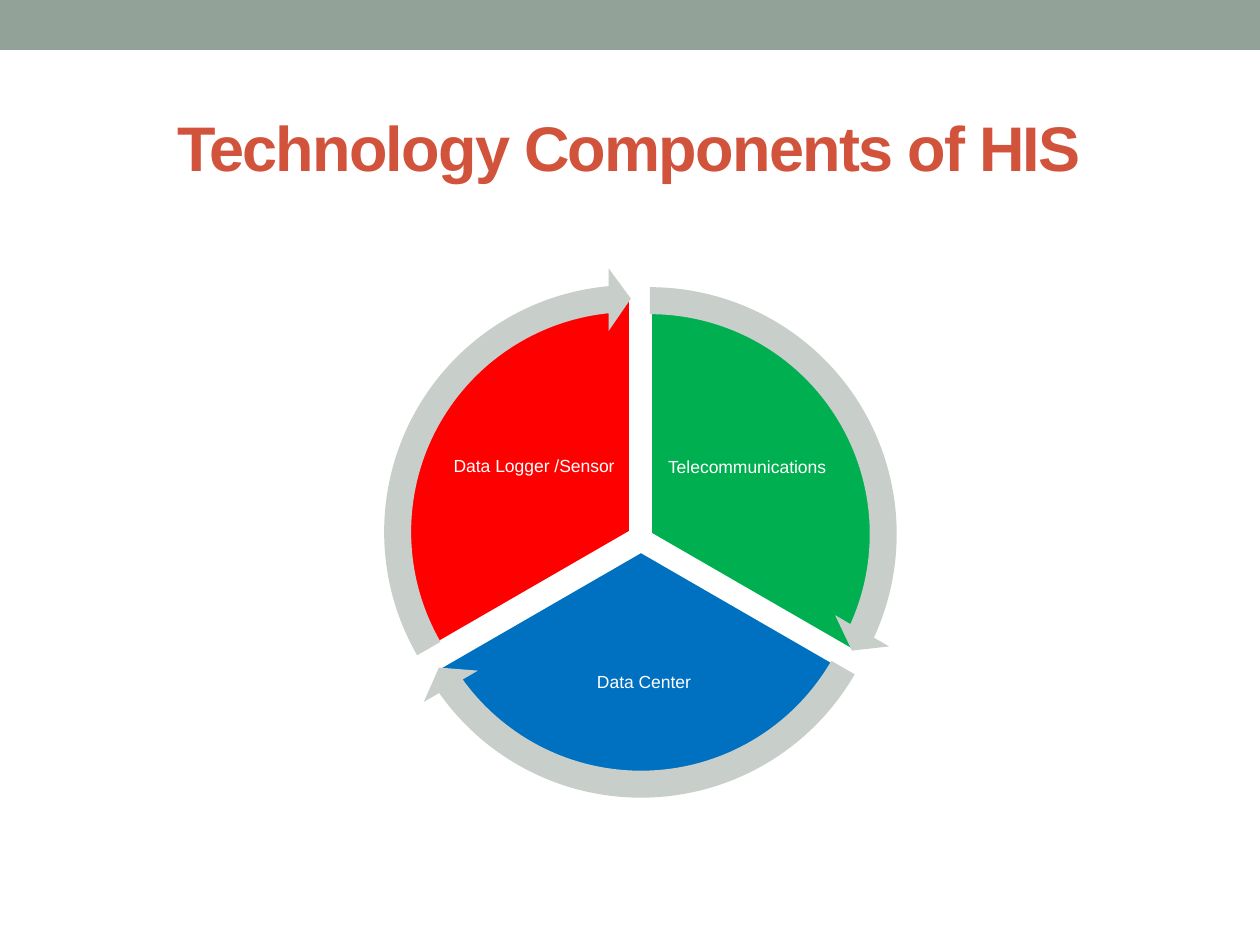
"""Build the slide on the technology components of HIS."""
import pptx
import pptx.util
from pptx.dml.color import RGBColor
from pptx.enum.shapes import MSO_SHAPE
from pptx.enum.text import MSO_ANCHOR, PP_ALIGN

TITLE = "Technology Components of HIS"
SECTORS = [
    dict(label="Telecommunications", color="00B050", start=270, end=30,
         pie=(415, 299), text=(663, 398, 168, 140)),
    dict(label="Data Center", color="0070C0", start=30, end=150,
         pie=(406, 316), text=(518, 621, 252, 123)),
    dict(label="Data Logger /Sensor", color="FF0000", start=150, end=270,
         pie=(396, 297), text=(450, 397, 168, 140)),
]
THEME = dict(font="Arial", band="93A299", title="D2533C", arrow="C8CECA",
             white="FFFFFF", title_pt=36, label_pt=10, line_pt=2.08)
SLIDE_W, SLIDE_H = 1260, 945
BAND_H = 50
TITLE_BOX = (62, 94, 1134, 105)
PIE_SIZE, ARROW_SIZE = 470, 529
ARROW_HEAD = 5.46
ARROW_WIDTH, ARROW_FLARE = 0.051, 0.059
DEGREE = 0.6
INSET = 1


def px(n):
    return pptx.util.Emu(round(n * 914400 / 126))


def rgb(name):
    return RGBColor.from_string(name)


def add_shape(s, kind, box, color, adjustments=(), outline=None):
    sp = s.shapes.add_shape(kind, *map(px, box))
    sp.shadow.inherit = False
    sp.fill.solid()
    sp.fill.fore_color.rgb = rgb(color)
    if outline:
        sp.line.color.rgb = rgb(outline)
        sp.line.width = pptx.util.Pt(THEME["line_pt"])
    else:
        sp.line.fill.background()
    for i, value in enumerate(adjustments):
        sp.adjustments[i] = value
    return sp


def write(tf, text, size, color, bold=False):
    tf.word_wrap = True
    tf.vertical_anchor = MSO_ANCHOR.MIDDLE
    p = tf.paragraphs[0]
    p.alignment = PP_ALIGN.CENTER
    r = p.add_run()
    r.text = text
    r.font.name = THEME["font"]
    r.font.size = pptx.util.Pt(size)
    r.font.bold = bold
    r.font.color.rgb = rgb(color)
    return p, r


def add_title(s):
    sp = s.shapes.title
    sp.left, sp.top, sp.width, sp.height = map(px, TITLE_BOX)
    p, r = write(sp.text_frame, TITLE, THEME["title_pt"], THEME["title"], True)
    r.font._element.set("spc", "-100")


def add_sector(s, sector):
    angles = [sector["start"] * DEGREE, sector["end"] * DEGREE]
    add_shape(s, MSO_SHAPE.PIE, (*sector["pie"], PIE_SIZE, PIE_SIZE),
              sector["color"], angles, THEME["white"])
    tf = s.shapes.add_textbox(*map(px, sector["text"])).text_frame
    tf.margin_left = tf.margin_right = tf.margin_top = tf.margin_bottom = px(INSET)
    p, r = write(tf, sector["label"], THEME["label_pt"], THEME["white"])
    p.line_spacing = 0.9


def add_arrow(s, sector):
    margin = (ARROW_SIZE - PIE_SIZE) / 2
    x, y = (n - margin for n in sector["pie"])
    head = ARROW_HEAD * DEGREE
    adjustments = (ARROW_WIDTH, head, sector["end"] * DEGREE - head,
                   sector["start"] * DEGREE, ARROW_FLARE)
    add_shape(s, MSO_SHAPE.CIRCULAR_ARROW, (x, y, ARROW_SIZE, ARROW_SIZE),
              THEME["arrow"], adjustments)


def main():
    prs = pptx.Presentation()
    prs.slide_width, prs.slide_height = px(SLIDE_W), px(SLIDE_H)
    s = prs.slides.add_slide(prs.slide_layouts[5])
    add_shape(s, MSO_SHAPE.RECTANGLE, (0, 0, SLIDE_W, BAND_H), THEME["band"])
    add_title(s)
    for sector in SECTORS:
        add_sector(s, sector)
    for sector in SECTORS:
        add_arrow(s, sector)
    prs.save("out.pptx")


if __name__ == "__main__":
    main()
